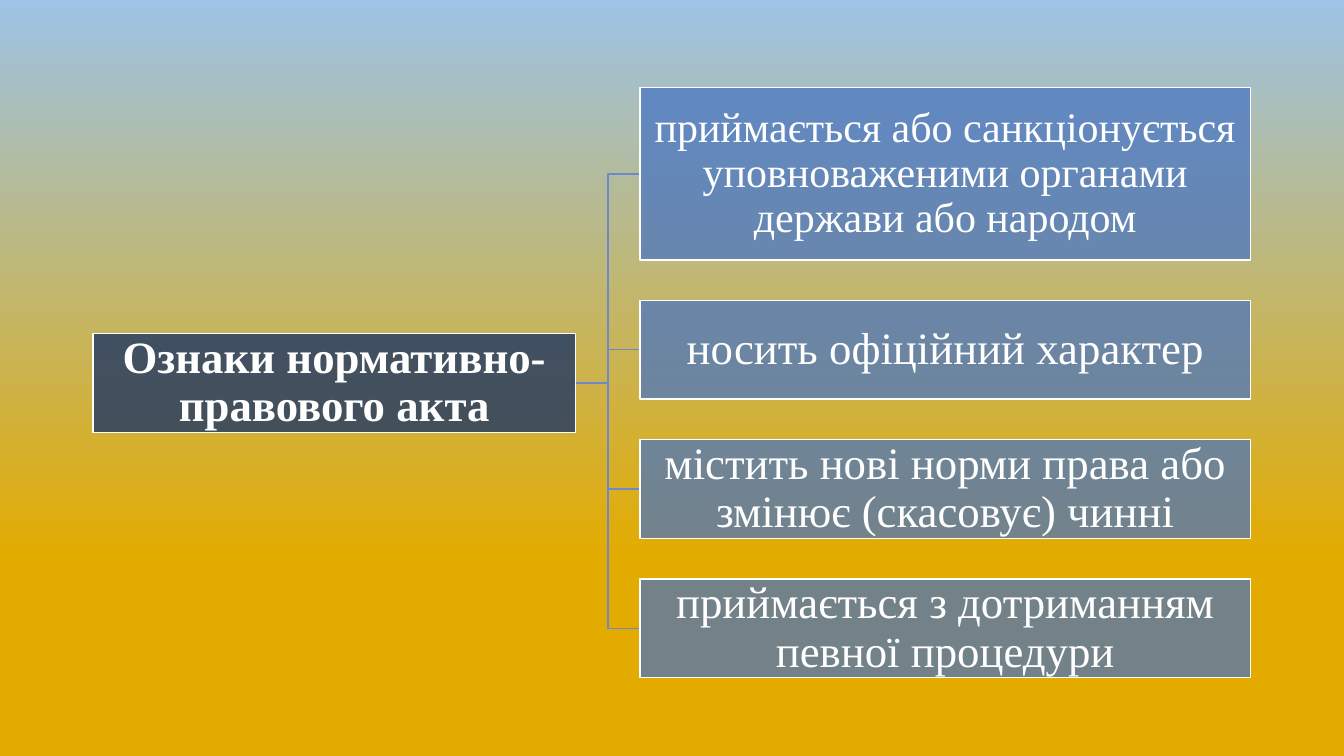
"""Slide with a horizontal tree of the features of a normative legal act."""
from dataclasses import dataclass

from lxml import etree
from pptx import Presentation
from pptx import util as u
from pptx.dml.color import RGBColor
from pptx.enum import shapes, text
from pptx.oxml.ns import qn

COLORS = {"sky": "9DC3E6", "gold": "E3AB00", "root": "203864",
          "feature": "4472C4", "branch": "6D89CB", "white": "FFFFFF"}
FRAME_FORMAT = {"word_wrap": True, "auto_size": text.MSO_AUTO_SIZE.NONE,
                "vertical_anchor": text.MSO_ANCHOR.MIDDLE,
                **{f"margin_{side}": u.Cm(0.05) for side in ("left", "top", "right", "bottom")}}
PARAGRAPH_FORMAT = {"alignment": text.PP_ALIGN.CENTER, "line_spacing": 0.9}
ROW_HEIGHT, ROW_GAP, FIRST_TOP = 2.49, 1.02, 2.21
FEATURE_LEFT, FEATURE_WIDTH = 16.13, 15.39


@dataclass
class Node:
    """A box of the tree, with lengths in centimetres."""
    words: str
    left: float
    top: float
    width: float
    height: float = ROW_HEIGHT
    size: int = 32
    color: str = "feature"
    opacity: int = 70
    bold: bool = False

    @property
    def middle(self) -> float:
        return self.top + self.height / 2


@dataclass
class Feature:
    """One listed feature of the act."""
    words: str
    height: float = ROW_HEIGHT
    size: int = 32


ROOT = Node("Ознаки нормативно-правового акта", 2.34, 8.41, 12.17,
            color="root", opacity=80, bold=True)
FEATURES = [
    Feature("приймається або санкціонується уповноваженими органами держави або народом", 4.34, 30),
    Feature("носить офіційний характер"),
    Feature("містить нові норми права або змінює (скасовує) чинні"),
    Feature("приймається з дотриманням певної процедури"),
]


def rgb(name: str) -> RGBColor:
    """Return a palette colour."""
    return RGBColor.from_string(COLORS[name])


def apply(target, values: dict) -> None:
    """Set every format value on the target."""
    for name, value in values.items():
        setattr(target, name, value)


def paint_background(slide) -> None:
    """Fill the slide from gold at the bottom to sky at the top."""
    fill = slide.background.fill
    fill.gradient()
    fill.gradient_angle = 90
    for stop, (position, color) in zip(fill.gradient_stops, [(0.26, "gold"), (1, "sky")]):
        stop.position = position
        stop.color.rgb = rgb(color)


def stack_features() -> list[Node]:
    """Place the features one under another with equal gaps."""
    nodes, top = [], FIRST_TOP
    for feature in FEATURES:
        nodes.append(Node(feature.words, FEATURE_LEFT, top, FEATURE_WIDTH,
                          feature.height, feature.size))
        top += feature.height + ROW_GAP
    return nodes


def draw_branch(slide, root: Node, feature: Node) -> None:
    """Draw the elbow line from the root to a feature."""
    start = root.left + root.width
    spine = (start + feature.left) / 2
    points = [(start, root.middle), (spine, root.middle),
              (spine, feature.middle), (feature.left, feature.middle)]
    corners = [(u.Cm(x), u.Cm(y)) for x, y in points]
    builder = slide.shapes.build_freeform(*corners[0])
    builder.add_line_segments(corners[1:], close=False)
    branch = builder.convert_to_shape()
    branch.shadow.inherit = False
    branch.fill.background()
    branch.line.color.rgb = rgb("branch")
    branch.line.width = u.Pt(1)


def format_node(box, node: Node) -> None:
    """Give a box its place, translucent fill, border and words."""
    apply(box, {side: u.Cm(getattr(node, side)) for side in ("left", "top", "width", "height")})
    box.fill.solid()
    box.fill.fore_color.rgb = rgb(node.color)
    tint = box.fill._xPr.find(f"{qn('a:solidFill')}/{qn('a:srgbClr')}")
    etree.SubElement(tint, qn("a:alpha"), val=str(node.opacity * 1000))
    box.line.color.rgb = rgb("white")
    box.line.width = u.Pt(1)
    apply(box.text_frame, FRAME_FORMAT)
    paragraph = box.text_frame.paragraphs[0]
    apply(paragraph, PARAGRAPH_FORMAT)
    run = paragraph.add_run()
    run.text = node.words
    apply(run.font, {"name": "Times New Roman", "size": u.Pt(node.size), "bold": node.bold})
    run.font.color.rgb = rgb("white")


def main() -> None:
    """Build and save the slide."""
    deck = Presentation()
    deck.slide_width, deck.slide_height = u.Cm(33.87), u.Cm(19.05)
    slide = deck.slides.add_slide(deck.slide_layouts.get_by_name("Title Only"))
    paint_background(slide)
    features = stack_features()
    for feature in reversed(features):
        draw_branch(slide, ROOT, feature)
    format_node(slide.shapes.title, ROOT)
    for feature in features:
        box = slide.shapes.add_shape(shapes.MSO_SHAPE.RECTANGLE, 0, 0, 0, 0)
        box.shadow.inherit = False
        format_node(box, feature)
    deck.save("out.pptx")


if __name__ == "__main__":
    main()
